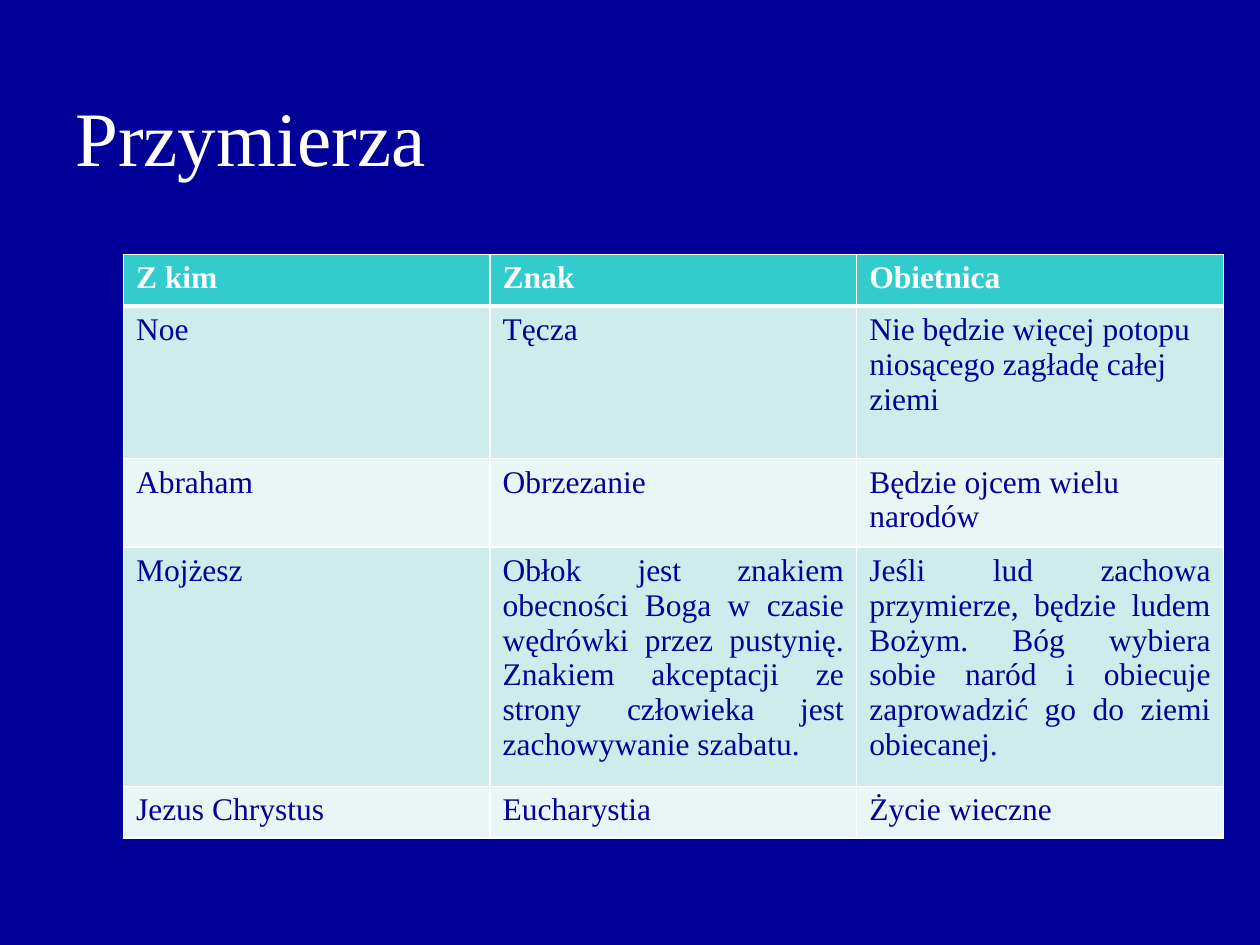
import pptx
import pptx.util
import pptx.dml.color
import pptx.enum.text
from lxml import etree

Inches, Pt = pptx.util.Inches, pptx.util.Pt
ALIGN = pptx.enum.text.PP_ALIGN
FONT = "Times New Roman"
WHITE, NAVY = "FFFFFF", "010199"
HEADER_FILL, BANDS = "33CCCC", ("CEECEC", "E8F6F6")

# Content
TITLE = "Przymierza"
ROWS = [
    ("Z kim", "Znak", "Obietnica"),
    ("Noe", "Tęcza", "Nie będzie więcej potopu niosącego zagładę całej ziemi"),
    ("Abraham", "Obrzezanie", "Będzie ojcem wielu narodów"),
    ("Mojżesz",
     "Obłok jest znakiem obecności Boga w czasie wędrówki przez pustynię. "
     "Znakiem akceptacji ze strony człowieka jest zachowywanie szabatu.",
     "Jeśli lud zachowa przymierze, będzie ludem Bożym. Bóg wybiera sobie "
     "naród i obiecuje zaprowadzić go do ziemi obiecanej."),
    ("Jezus Chrystus", "Eucharystia", "Życie wieczne"),
]
ROW_HEIGHTS = (0.41, 1.21, 0.66, 1.75, 0.41)
COLUMN_WIDTH = 2.91
FIRST_JUSTIFIED_ROW = 3


def rgb(color):
    return pptx.dml.color.RGBColor.from_string(color)


def set_font(p, size, color, bold=False):
    p.font.name, p.font.size, p.font.bold = FONT, Pt(size), bold
    p.font.color.rgb = rgb(color)


def set_borders(cell, bottom):
    """Draw white cell borders; they must precede the cell's fill."""
    ns = pptx.oxml.ns.qn
    tcPr = cell._tc.get_or_add_tcPr()
    for side, width in (("L", 1), ("R", 1), ("T", 1), ("B", bottom)):
        ln = etree.SubElement(tcPr, ns(f"a:ln{side}"), w=str(Pt(width)))
        fill = etree.SubElement(ln, ns("a:solidFill"))
        etree.SubElement(fill, ns("a:srgbClr"), val=WHITE)


prs = pptx.Presentation()
prs.slide_width, prs.slide_height = Inches(10), Inches(7.5)
s = prs.slides.add_slide(prs.slide_layouts[6])
s.background.fill.solid()
s.background.fill.fore_color.rgb = rgb("000099")

# Title
tf = s.shapes.add_textbox(Inches(0.5), Inches(0.32), Inches(9), Inches(1.51)).text_frame
tf.word_wrap = True
tf.vertical_anchor = pptx.enum.text.MSO_ANCHOR.MIDDLE
tf.text = TITLE
set_font(tf.paragraphs[0], 44, WHITE)

# Table of covenants
table = s.shapes.add_table(
    len(ROWS), len(ROWS[0]), Inches(0.98), Inches(2.02),
    Inches(COLUMN_WIDTH * len(ROWS[0])), Inches(sum(ROW_HEIGHTS))).table
for column in table.columns:
    column.width = Inches(COLUMN_WIDTH)
for i, (texts, height) in enumerate(zip(ROWS, ROW_HEIGHTS)):
    table.rows[i].height = Inches(height)
    header = i == 0
    for j, text in enumerate(texts):
        cell = table.cell(i, j)
        set_borders(cell, 3 if header else 1)
        cell.fill.solid()
        cell.fill.fore_color.rgb = rgb(HEADER_FILL if header else BANDS[(i - 1) % 2])
        cell.text = text
        p = cell.text_frame.paragraphs[0]
        set_font(p, 18, WHITE if header else NAVY, header)
        if i >= FIRST_JUSTIFIED_ROW and j > 0:
            p.alignment = ALIGN.JUSTIFY

prs.save("out.pptx")
